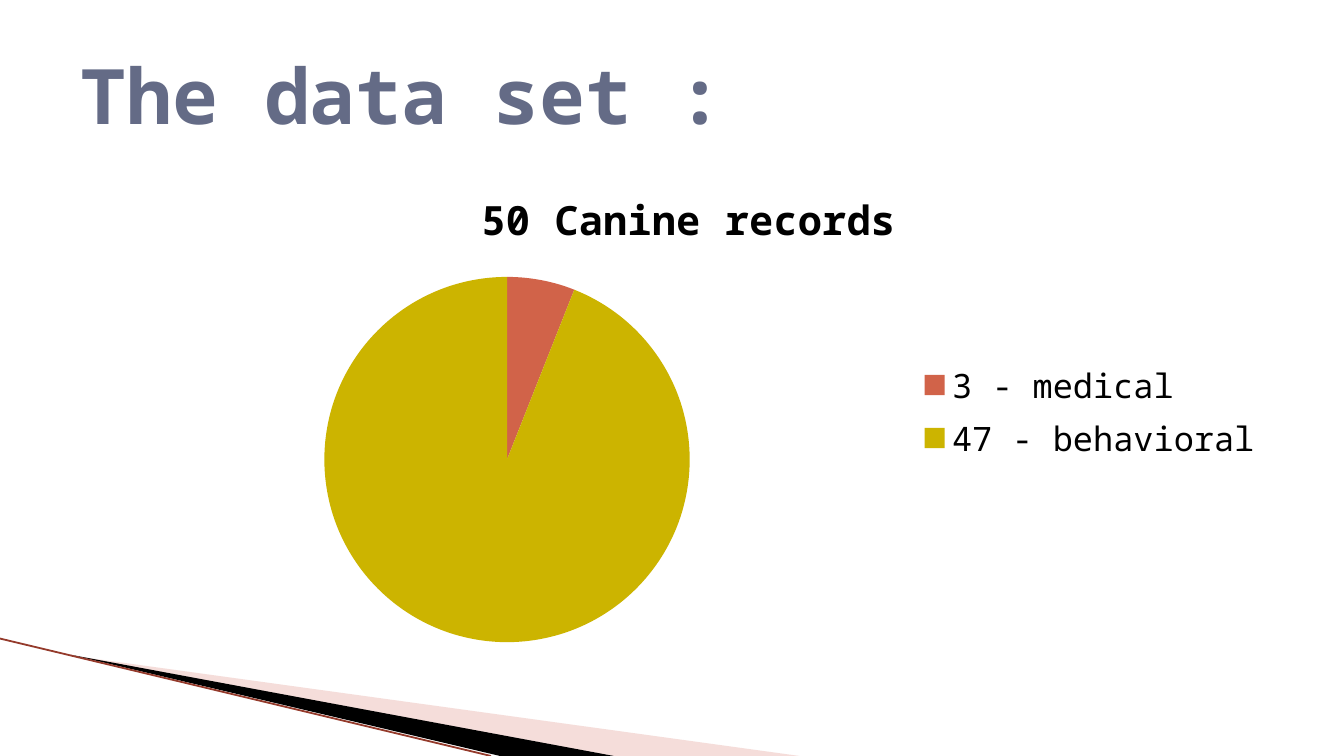
from lxml.etree import SubElement
from pptx import Presentation
from pptx.chart.data import CategoryChartData
from pptx.dml.color import RGBColor
from pptx.enum.chart import XL_CHART_TYPE, XL_LEGEND_POSITION
from pptx.enum.shapes import MSO_CONNECTOR
from pptx.enum.text import MSO_ANCHOR
from pptx.oxml.ns import qn
from pptx.util import Cm, Pt

COLORS = {
    "title": "646B86",
    "text": "000000",
    "medical": "D16349",
    "behavioral": "CCB400",
    "pale_wedge": "E7ACA4",
    "dark_wedge": "000000",
    "edge": "943A2B",
}
FONT = "Noto Sans Mono"


def color(name):
    return RGBColor.from_string(COLORS[name])


def format_font(font, size=18, fill="text", bold=False):
    font.name = FONT
    font.size = Pt(size)
    font.bold = bold
    font.color.rgb = color(fill)


def write_text(text_frame, text, **font_format):
    paragraph = text_frame.paragraphs[0]
    run = paragraph.add_run()
    run.text = text
    format_font(run.font, **font_format)


class SlideBuilder:
    def __init__(self, presentation):
        self.slide = presentation.slides.add_slide(presentation.slide_layouts[6])
        self.shapes = self.slide.shapes

    def wedge(self, points, fill, opacity=100):
        start, *others = [(Cm(x), Cm(y)) for x, y in points]
        builder = self.shapes.build_freeform(*start)
        builder.add_line_segments(others, close=True)
        shape = builder.convert_to_shape()
        shape.shadow.inherit = False
        shape.line.fill.background()
        shape.fill.solid()
        shape.fill.fore_color.rgb = color(fill)
        if opacity < 100:
            fill_color = shape.fill._xPr.find(qn("a:solidFill"))[0]
            SubElement(fill_color, qn("a:alpha"), val=str(opacity * 1000))

    def line(self, start, end, fill, width):
        ends = [Cm(value) for value in (*start, *end)]
        connector = self.shapes.add_connector(MSO_CONNECTOR.STRAIGHT, *ends)
        connector.line.color.rgb = color(fill)
        connector.line.width = Pt(width)
        SubElement(connector._element.spPr, qn("a:effectLst"))

    def title(self, text, box, **font_format):
        shape = self.shapes.add_textbox(*[Cm(value) for value in box])
        text_frame = shape.text_frame
        text_frame.word_wrap = True
        text_frame.vertical_anchor = MSO_ANCHOR.MIDDLE
        write_text(text_frame, text, **font_format)

    def pie(self, name, slices, box):
        data = CategoryChartData()
        data.categories = [label for label, _, _ in slices]
        data.add_series(name, [value for _, value, _ in slices])
        frame = self.shapes.add_chart(
            XL_CHART_TYPE.PIE, *[Cm(value) for value in box], data)
        chart = frame.chart
        format_font(chart.font)

        # Title and legend
        chart.has_title = True
        write_text(chart.chart_title.text_frame, name, size=21.6, bold=True)
        chart.chart_title.include_in_layout = False
        chart.has_legend = True
        chart.legend.position = XL_LEGEND_POSITION.RIGHT
        chart.legend.include_in_layout = False
        format_font(chart.legend.font)

        # Slice colours
        plot = chart.plots[0]
        plot.vary_by_categories = True
        for index, (_, _, fill) in enumerate(slices):
            point_format = plot.series[0].points[index].format
            point_format.fill.solid()
            point_format.fill.fore_color.rgb = color(fill)
            point_format.line.fill.background()


def main():
    presentation = Presentation()
    presentation.slide_width = Cm(25.4)
    presentation.slide_height = Cm(14.29)
    builder = SlideBuilder(presentation)

    # Corner decoration
    builder.wedge([(1.4, 12.4), (15.11, 14.29), (11.58, 14.29)],
                  "pale_wedge", opacity=40)
    builder.wedge([(1.35, 12.38), (11.6, 14.29), (9.45, 14.29)], "dark_wedge")
    builder.line((0, 12.07), (9.28, 14.29), "edge", 0.95)

    # Pie chart of record types
    builder.pie("50 Canine records",
                [("3 - medical", 6, "medical"),
                 ("47 - behavioral", 94, "behavioral")],
                (1.9, 3.07, 22.23, 9.42))

    # Slide title
    builder.title("The data set :", (1.27, 0.58, 22.86, 2.39),
                  size=41, fill="title", bold=True)

    presentation.save("out.pptx")


if __name__ == "__main__":
    main()
